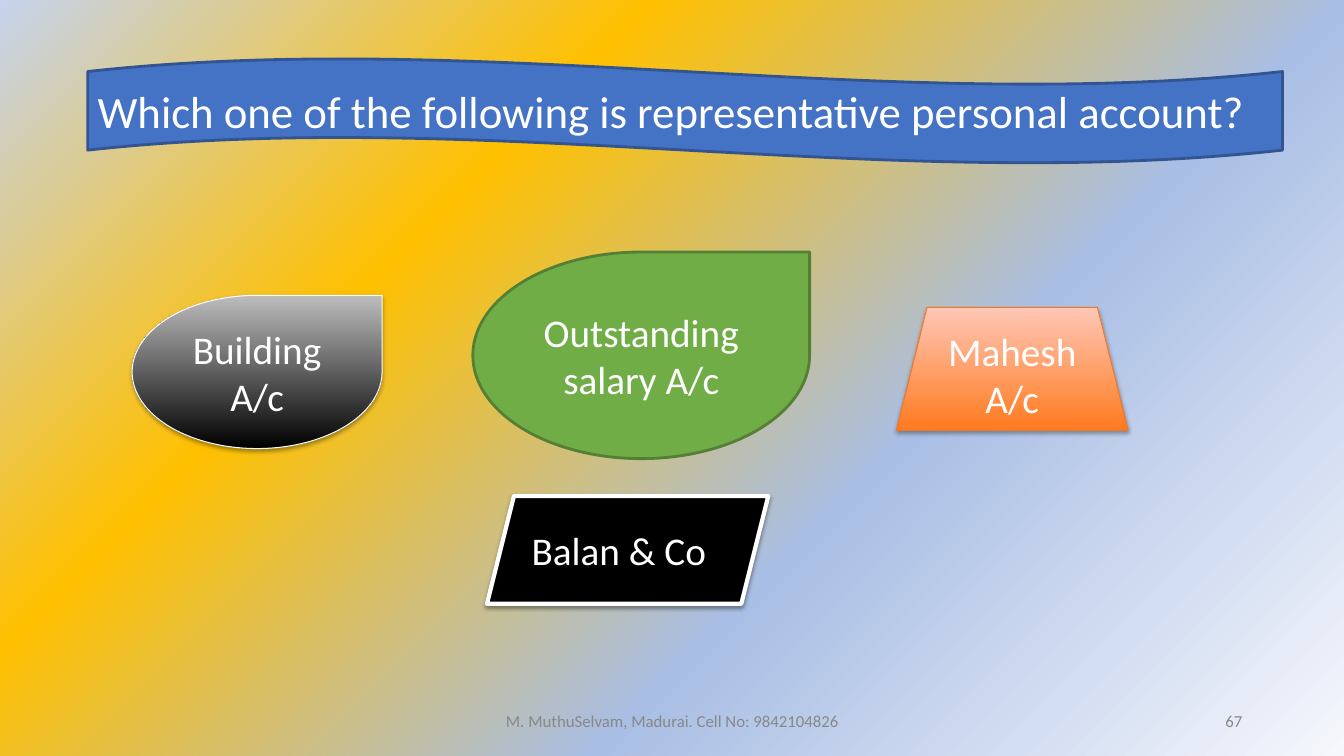
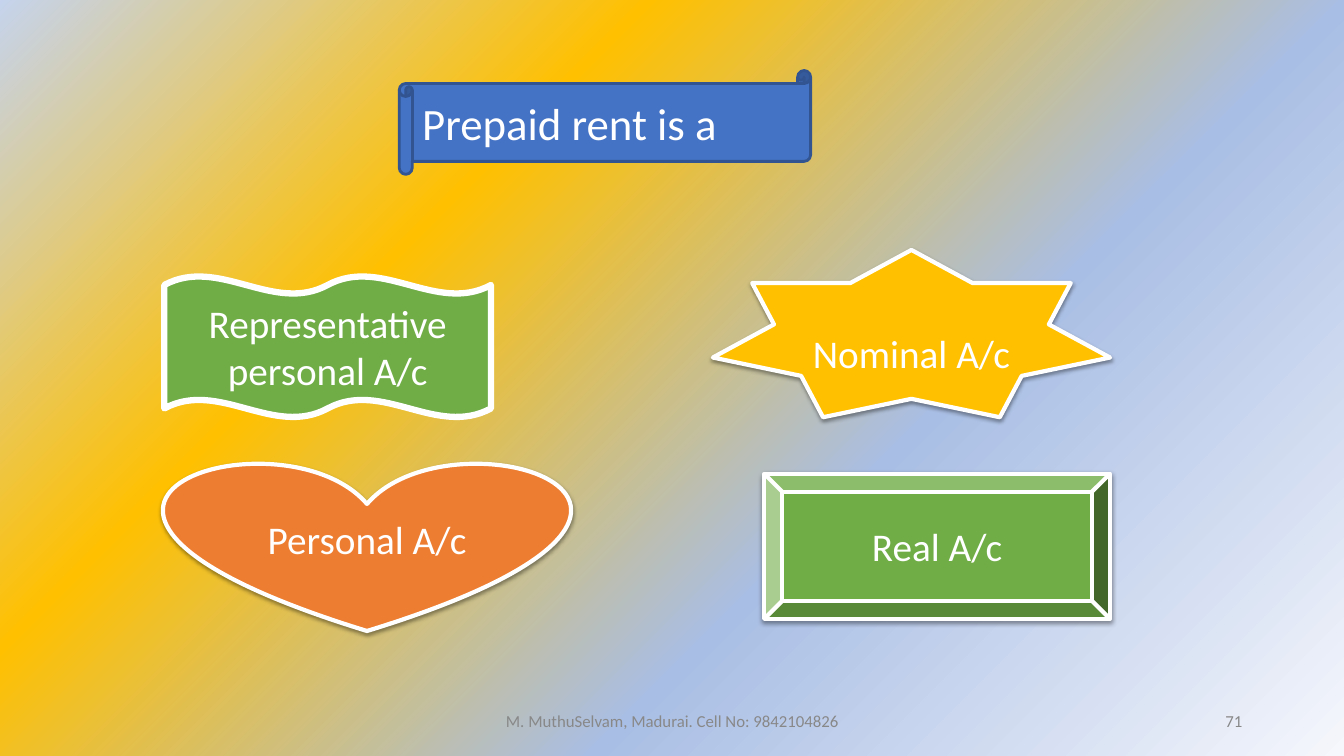
from lxml import etree
from pptx import Presentation
from pptx.dml.color import RGBColor
from pptx.enum.shapes import MSO_SHAPE as SHAPE
from pptx.enum.text import MSO_ANCHOR as ANCHOR, PP_ALIGN as ALIGN
from pptx.oxml import parse_xml
from pptx.oxml.ns import nsdecls, qn
from pptx.util import Inches, Pt

WHITE, BLACK, GRAY = "FFFFFF", "000000", "888888"
BLUE, NAVY = "4472C4", "325491"
GREEN, DARK_GREEN = "70AD47", "538035"
ORANGE, GOLD = "ED7D31", "FFC000"
FONT = "Calibri"
FOOTER = "M. MuthuSelvam, Madurai. Cell No: 9842104826"
BACKDROP = [(0, "F5F7FC"), (36, "A9BEE4"), (69, GOLD), (100, "C5D3ED")]
SOFT = (35, 1.8)
STRONG = (38, 1.6)


def rgb(value):
    return RGBColor.from_string(value)


def paint_backdrop(master):
    fill = master.background.fill
    fill.gradient()
    grad = master._element.find(".//" + qn("a:gradFill"))
    for child in list(grad):
        grad.remove(child)
    stops = etree.SubElement(grad, qn("a:gsLst"))
    for pos, color in BACKDROP:
        stop = etree.SubElement(stops, qn("a:gs"), pos=str(pos * 1000))
        etree.SubElement(stop, qn("a:srgbClr"), val=color)
    circle = etree.SubElement(grad, qn("a:path"), path="circle")
    etree.SubElement(circle, qn("a:fillToRect"), l="100000", t="100000")
    etree.SubElement(grad, qn("a:tileRect"), r="-100000", b="-100000")


def paint(fill, color):
    if isinstance(color, str):
        fill.solid()
        fill.fore_color.rgb = rgb(color)
        return
    fill.gradient()
    fill.gradient_angle = 90
    for stop, pos, value in zip(fill.gradient_stops, (0, 1), color):
        stop.position = pos
        stop.color.rgb = rgb(value)


def cast_shadow(sp, opacity, distance):
    sp.shadow.inherit = False
    effects = sp._element.spPr.find(qn("a:effectLst"))
    effects.append(parse_xml(
        f'<a:outerShdw {nsdecls("a")} blurRad="{Pt(3.1)}" dist="{Pt(distance)}" '
        f'dir="5400000" algn="ctr" rotWithShape="0"><a:srgbClr val="{BLACK}">'
        f'<a:alpha val="{opacity * 1000}"/></a:srgbClr></a:outerShdw>'))


def write(sp, text, size, color, align):
    tf = sp.text_frame
    tf.word_wrap = True
    tf.vertical_anchor = ANCHOR.MIDDLE
    p = tf.paragraphs[0]
    p.alignment = align
    r = p.add_run()
    r.text = text
    r.font.name = FONT
    r.font.size = Pt(size)
    r.font.color.rgb = rgb(color)


def add_block(slide, kind, box, text, fill, line, width,
              shadow=None, size=28, align=ALIGN.CENTER, drop=0):
    sp = slide.shapes.add_shape(kind, *map(Inches, box))
    paint(sp.fill, fill)
    sp.line.color.rgb = rgb(line)
    sp.line.width = Pt(width)
    if shadow:
        cast_shadow(sp, *shadow)
    else:
        sp.shadow.inherit = False
    write(sp, text, size, WHITE, align)
    sp.text_frame.margin_top = Inches(0.05 + drop)


def add_question(slide, kind, box, text):
    add_block(slide, kind, box, text, BLUE, NAVY, 2, size=32, align=ALIGN.LEFT)


def add_footer(slide, number):
    for left, width, text, align in ((4.42, 4.5, FOOTER, ALIGN.CENTER),
                                     (9.42, 3, str(number), ALIGN.RIGHT)):
        box = slide.shapes.add_textbox(*map(Inches, (left, 6.95, width, 0.4)))
        write(box, text, 12, GRAY, align)


def add_quiz_slide(prs, number, question, answers):
    slide = prs.slides.add_slide(prs.slide_layouts[6])
    add_question(slide, *question)
    for kind, box, text, fill, line, width, extra in answers:
        add_block(slide, kind, box, text, fill, line, width, **extra)
    add_footer(slide, number)


def main():
    prs = Presentation()
    prs.slide_width, prs.slide_height = Inches(13.33), Inches(7.5)
    paint_backdrop(prs.slide_master)
    soft, strong = {"shadow": SOFT}, {"shadow": STRONG}
    add_quiz_slide(
        prs, 67,
        (SHAPE.WAVE, (0.87, 0.58, 11.85, 1.04),
         "Which one of the following is representative personal account?"),
        [(SHAPE.TEAR, (1.31, 2.93, 2.48, 1.52), "Building A/c",
          (BLACK, "BDBDBD"), WHITE, 0.75, soft),
         (SHAPE.TRAPEZOID, (8.89, 3.05, 2.3, 1.22), "Mahesh A/c",
          ("FF7A1F", "FFC7B6"), "EC792B", 0.75, soft),
         (SHAPE.PARALLELOGRAM, (4.83, 4.92, 2.79, 1.07), "Balan & Co",
          BLACK, WHITE, 3, {**strong, "align": ALIGN.LEFT}),
         (SHAPE.TEAR, (4.69, 2.5, 3.34, 2.05), "Outstanding salary A/c",
          GREEN, DARK_GREEN, 2, {})])
    add_quiz_slide(
        prs, 71,
        (SHAPE.HORIZONTAL_SCROLL, (3.96, 0.7, 4.08, 1.03), "Prepaid rent is a"),
        [(SHAPE.HEART, (1.63, 4.58, 4.02, 1.68), "Personal A/c",
          ORANGE, WHITE, 3, strong),
         (SHAPE.STAR_7_POINT, (7.07, 2.48, 3.94, 1.66), "Nominal A/c",
          GOLD, WHITE, 3, {**strong, "drop": 0.47}),
         (SHAPE.BEVEL, (7.58, 4.7, 3.43, 1.44), "Real A/c",
          GREEN, WHITE, 3, strong),
         (SHAPE.DOUBLE_WAVE, (1.63, 2.74, 3.24, 1.4),
          "Representative personal A/c", GREEN, WHITE, 4.5, {})])
    prs.save("out.pptx")


if __name__ == "__main__":
    main()
